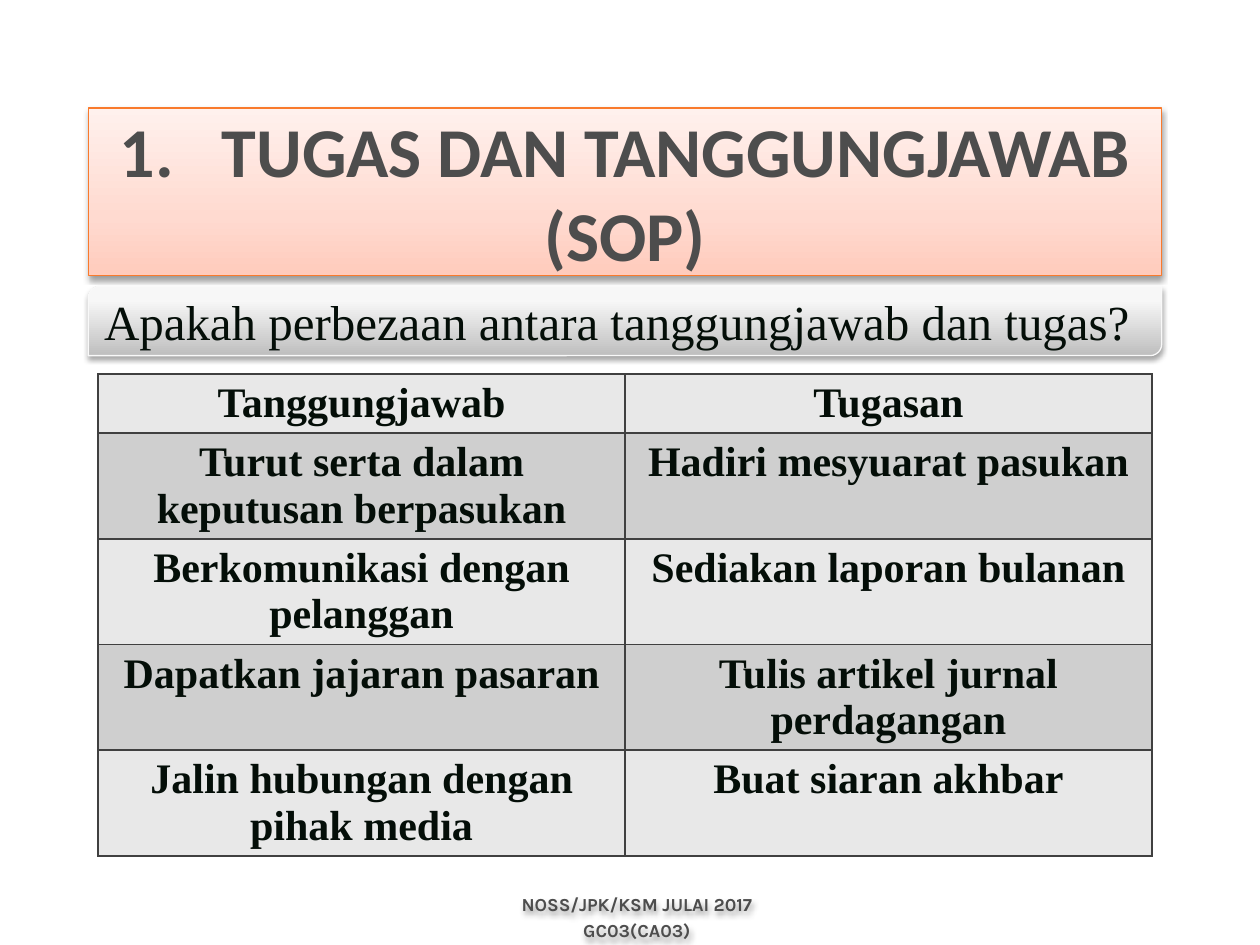
from pptx import Presentation
from pptx.dml.color import RGBColor
from pptx.enum.shapes import MSO_SHAPE
from pptx.enum.text import MSO_ANCHOR, MSO_AUTO_SIZE, PP_ALIGN
from pptx.oxml import parse_xml
from pptx.util import Cm, Pt

NS = 'xmlns:a="http://schemas.openxmlformats.org/drawingml/2006/main"'
ROWS = [
    ("Tanggungjawab", "Tugasan"),
    ("Turut serta dalam keputusan berpasukan", "Hadiri mesyuarat pasukan"),
    ("Berkomunikasi dengan pelanggan", "Sediakan laporan bulanan"),
    ("Dapatkan jajaran pasaran", "Tulis artikel jurnal perdagangan"),
    ("Jalin hubungan dengan pihak media", "Buat siaran akhbar"),
]


def rgb(code):
    return RGBColor.from_string(code)


class Deck:
    INK, GREY, RULE = "040E08", "4D4D4D", "404040"
    BANDS = ("E8E8E8", "CFCFCF")
    SERIF, SANS, NOTE = "Times New Roman", "Calibri", "Karla"

    def __init__(self):
        self.prs = Presentation()
        self.prs.slide_width, self.prs.slide_height = Cm(25.4), Cm(19.05)
        self.slide = self.prs.slides.add_slide(self.prs.slide_layouts[5])

    def put(self, para, text, size, face, color, bold=False, align=PP_ALIGN.CENTER):
        """Add one styled run to a paragraph."""
        para.alignment = align
        run = para.add_run()
        run.text = text
        font = run.font
        font.size, font.name, font.bold = Pt(size), face, bold
        font.color.rgb = rgb(color)

    def lines(self, frame, texts, *style, gap=0):
        """Fill a frame with one paragraph per text and return the paragraphs."""
        for i, text in enumerate(texts):
            para = frame.add_paragraph() if i else frame.paragraphs[0]
            para.space_before = Pt(gap if i else 0)
            self.put(para, text, *style)
        return frame.paragraphs

    def shade(self, shape, alpha, dist):
        """Drop a soft black shadow straight down."""
        shape._element.spPr.append(parse_xml(
            f'<a:effectLst {NS}><a:outerShdw blurRad="{Pt(3.1)}" dist="{Pt(dist)}" '
            f'dir="5400000" rotWithShape="0"><a:srgbClr val="000000">'
            f'<a:alpha val="{alpha * 1000}"/></a:srgbClr></a:outerShdw></a:effectLst>'))

    def panel(self, shape, stops, edge, alpha, dist):
        """Style a bar with an upward gradient, an edge and a shadow."""
        shape.fill.gradient()
        shape.fill.gradient_angle = 90
        grad = shape._element.spPr.find(".//{*}gsLst")
        grad[:] = [parse_xml(f'<a:gs {NS} pos="{pos * 1000}"><a:srgbClr val="{code}"/></a:gs>')
                   for pos, code in stops]
        shape.line.color.rgb = rgb(edge)
        shape.line.width = Pt(0.75)
        self.shade(shape, alpha, dist)
        frame = shape.text_frame
        frame.auto_size = MSO_AUTO_SIZE.NONE
        frame.word_wrap = False
        frame.vertical_anchor = MSO_ANCHOR.MIDDLE
        return frame

    def title(self, texts):
        box = self.slide.shapes.title
        box.left, box.top, box.width, box.height = Cm(1.78), Cm(2.18), Cm(21.64), Cm(3.38)
        stops = [(0, "FFCBBC"), (35, "FFDAD0"), (100, "FFF1ED")]
        frame = self.panel(box, stops, "F97A2C", 38, 1.6)
        paras = self.lines(frame, texts, 40, self.SANS, self.GREY, True)
        for para in paras:
            props = para._p.get_or_add_pPr()
            props.set("marL", str(Cm(2.06)))
            props.set("indent", str(-Cm(2.06)))
        paras[0]._p.pPr.append(parse_xml(f'<a:buAutoNum {NS} type="arabicPeriod"/>'))

    def ask(self, text):
        bar = self.slide.shapes.add_shape(
            MSO_SHAPE.ROUND_2_DIAG_RECTANGLE, Cm(1.78), Cm(5.77), Cm(21.64), Cm(1.4))
        stops = [(0, "BEBEBE"), (80, "F7F7F7"), (100, "F8F8F8")]
        frame = self.panel(bar, stops, "F9F9F9", 35, 1.8)
        self.lines(frame, [text], 28, self.SERIF, self.INK, False, PP_ALIGN.LEFT)

    def border(self, cell):
        props = cell._tc.get_or_add_tcPr()
        for i, side in enumerate(("lnL", "lnR", "lnT", "lnB")):
            props.insert(i, parse_xml(
                f'<a:{side} {NS} w="{Pt(1)}"><a:solidFill><a:srgbClr val="{self.RULE}"/>'
                f'</a:solidFill></a:{side}>'))

    def table(self, rows):
        grid = self.slide.shapes.add_table(
            len(rows), len(rows[0]), Cm(1.98), Cm(7.54), Cm(21.24), Cm(9.71)).table
        for i, texts in enumerate(rows):
            grid.rows[i].height = Cm(2.13 if i else 1.19)
            for j, text in enumerate(texts):
                cell = grid.cell(i, j)
                cell.fill.solid()
                cell.fill.fore_color.rgb = rgb(self.BANDS[i % 2])
                self.border(cell)
                self.lines(cell.text_frame, [text], 24, self.SERIF, self.INK, True)

    def footer(self, texts):
        box = self.slide.shapes.add_textbox(Cm(0.99), Cm(17.88), Cm(23.7), Cm(1.17))
        box.text_frame.word_wrap = True
        self.shade(box, 38, 1.6)
        self.lines(box.text_frame, texts, 10.5, self.NOTE, self.GREY, True, gap=2.1)


def main():
    deck = Deck()
    deck.title(["TUGAS DAN TANGGUNGJAWAB", "(SOP)"])
    deck.ask("Apakah perbezaan antara tanggungjawab dan tugas?")
    deck.table(ROWS)
    deck.footer(["NOSS/JPK/KSM JULAI 2017", "GC03(CA03)"])
    deck.prs.save("out.pptx")


if __name__ == "__main__":
    main()
